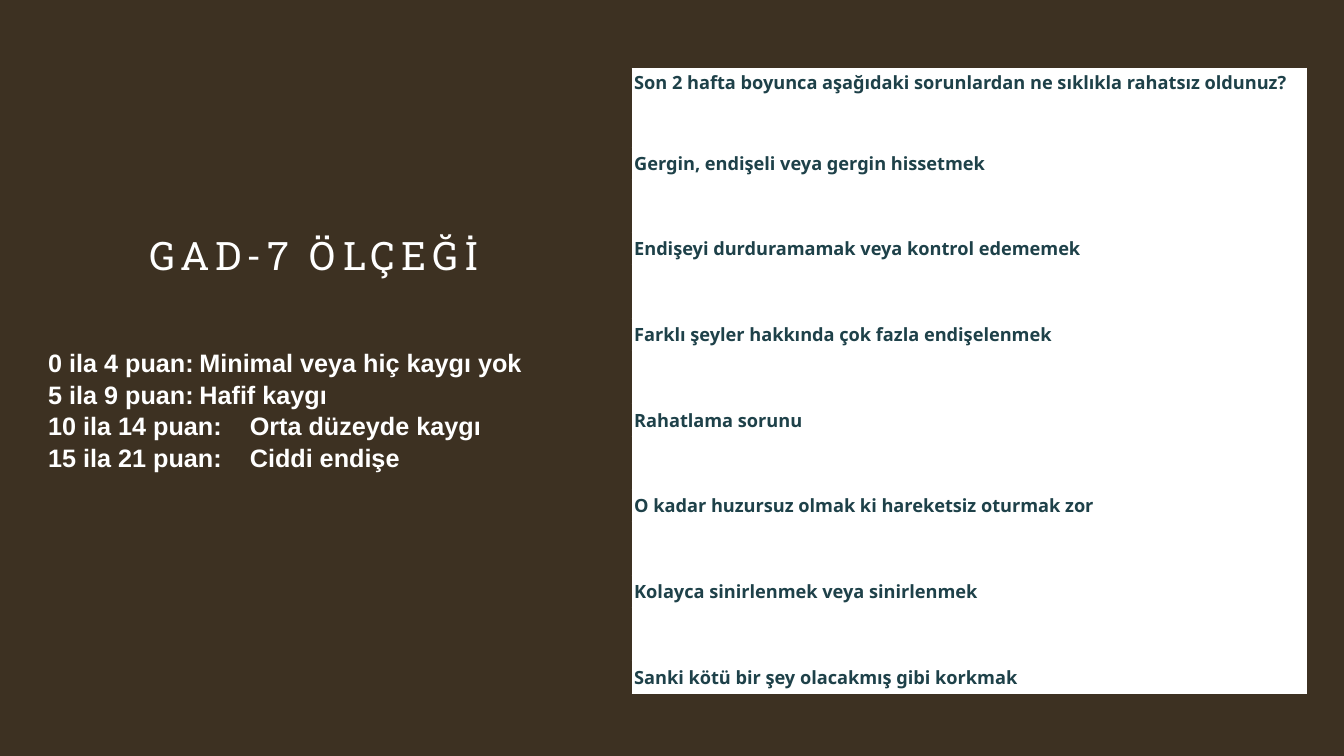
"""Build the GAD-7 scale slide: score bands on the left, questions on the right."""
from dataclasses import dataclass

from pptx import Presentation
from pptx import util as u
from pptx.dml.color import RGBColor
from pptx.enum import text

BROWN = RGBColor(0x3D, 0x31, 0x22)
WHITE = RGBColor(0xFF, 0xFF, 0xFF)
TEAL = RGBColor(0x1E, 0x41, 0x49)

HEADING = "Son 2 hafta boyunca aşağıdaki sorunlardan ne sıklıkla rahatsız oldunuz?"
QUESTIONS = [
    "Gergin, endişeli veya gergin hissetmek",
    "Endişeyi durduramamak veya kontrol edememek",
    "Farklı şeyler hakkında çok fazla endişelenmek",
    "Rahatlama sorunu",
    "O kadar huzursuz olmak ki hareketsiz oturmak zor",
    "Kolayca sinirlenmek veya sinirlenmek",
    "Sanki kötü bir şey olacakmış gibi korkmak",
]
SCORES = [
    "0 ila 4 puan:\tMinimal veya hiç kaygı yok",
    "5 ila 9 puan:\tHafif kaygı",
    "10 ila 14 puan:\tOrta düzeyde kaygı",
    "15 ila 21 puan:\tCiddi endişe",
]
COLUMNS = [3.07, 3.62]
HEADING_HEIGHT, QUESTION_HEIGHT, ANSWER_HEIGHT = 0.78, 0.32, 0.53


@dataclass
class TextStyle:
    """Font settings of a paragraph."""
    name: str
    size: float
    color: RGBColor
    bold: bool


@dataclass
class TextBlock:
    """A text box with its place, lines and style."""
    left: float
    top: float
    width: float
    height: float
    lines: list[str]
    style: TextStyle
    align: text.PP_ALIGN = text.PP_ALIGN.LEFT
    anchor: text.MSO_ANCHOR = text.MSO_ANCHOR.TOP
    line_spacing: float = 1.0
    tracking: int = 0


QUESTION_STYLE = TextStyle("Noto Sans", 13, TEAL, True)
BLOCKS = [
    TextBlock(0.38, 3.38, 6.67, 1.32, SCORES, TextStyle("Arial", 18, WHITE, True),
              line_spacing=1.05),
    TextBlock(-0.45, 1.97, 7.11, 1.11, ["GAD-7 ÖLÇEĞİ"],
              TextStyle("Roboto Slab", 28, WHITE, False),
              text.PP_ALIGN.CENTER, text.MSO_ANCHOR.MIDDLE, tracking=400),
]


def set_font(p, style: TextStyle) -> None:
    """Apply a style to a paragraph."""
    p.font.name = style.name
    p.font.size = u.Pt(style.size)
    p.font.bold = style.bold
    p.font.color.rgb = style.color


def add_block(s, block: TextBlock) -> None:
    """Draw one text box."""
    sp = s.shapes.add_textbox(*map(u.Inches, (block.left, block.top, block.width, block.height)))
    tf = sp.text_frame
    tf.word_wrap = True
    tf.vertical_anchor = block.anchor
    for i, line in enumerate(block.lines):
        p = tf.paragraphs[0] if i == 0 else tf.add_paragraph()
        r = p.add_run()
        r.text = line
        p.alignment = block.align
        p.line_spacing = block.line_spacing
        set_font(p, block.style)
        if block.tracking:
            r.font._element.set("spc", str(block.tracking))


def fill_row(table, row: int, line: str, anchor: text.MSO_ANCHOR) -> None:
    """Merge a row and write its question."""
    cell = table.cell(row, 0)
    cell.merge(table.cell(row, 1))
    cell.margin_left = cell.margin_right = u.Inches(0.02)
    cell.margin_top = cell.margin_bottom = u.Inches(0.02)
    cell.vertical_anchor = anchor
    cell.text = line
    set_font(cell.text_frame.paragraphs[0], QUESTION_STYLE)


def add_questions(s) -> None:
    """Draw the table with an empty answer row between questions."""
    heights = [HEADING_HEIGHT, QUESTION_HEIGHT]
    heights += [ANSWER_HEIGHT, QUESTION_HEIGHT] * (len(QUESTIONS) - 1)
    table = s.shapes.add_table(
        len(heights), len(COLUMNS), u.Inches(6.27), u.Inches(0.68),
        u.Inches(sum(COLUMNS)), u.Inches(sum(heights))).table
    table.first_row = table.horz_banding = False
    for column, width in zip(table.columns, COLUMNS):
        column.width = u.Inches(width)
    for row, height in zip(table.rows, heights):
        row.height = u.Inches(height)
    for cell in table.iter_cells():
        cell.fill.solid()
        cell.fill.fore_color.rgb = WHITE
    fill_row(table, 0, HEADING, text.MSO_ANCHOR.TOP)
    for i, question in enumerate(QUESTIONS):
        fill_row(table, 2 * i + 1, question, text.MSO_ANCHOR.MIDDLE)


def main() -> None:
    """Build and save the slide."""
    prs = Presentation()
    prs.slide_width, prs.slide_height = u.Inches(13.33), u.Inches(7.5)
    s = prs.slides.add_slide(prs.slide_layouts[6])
    s.background.fill.solid()
    s.background.fill.fore_color.rgb = BROWN
    add_questions(s)
    for block in BLOCKS:
        add_block(s, block)
    prs.save("out.pptx")


if __name__ == "__main__":
    main()
